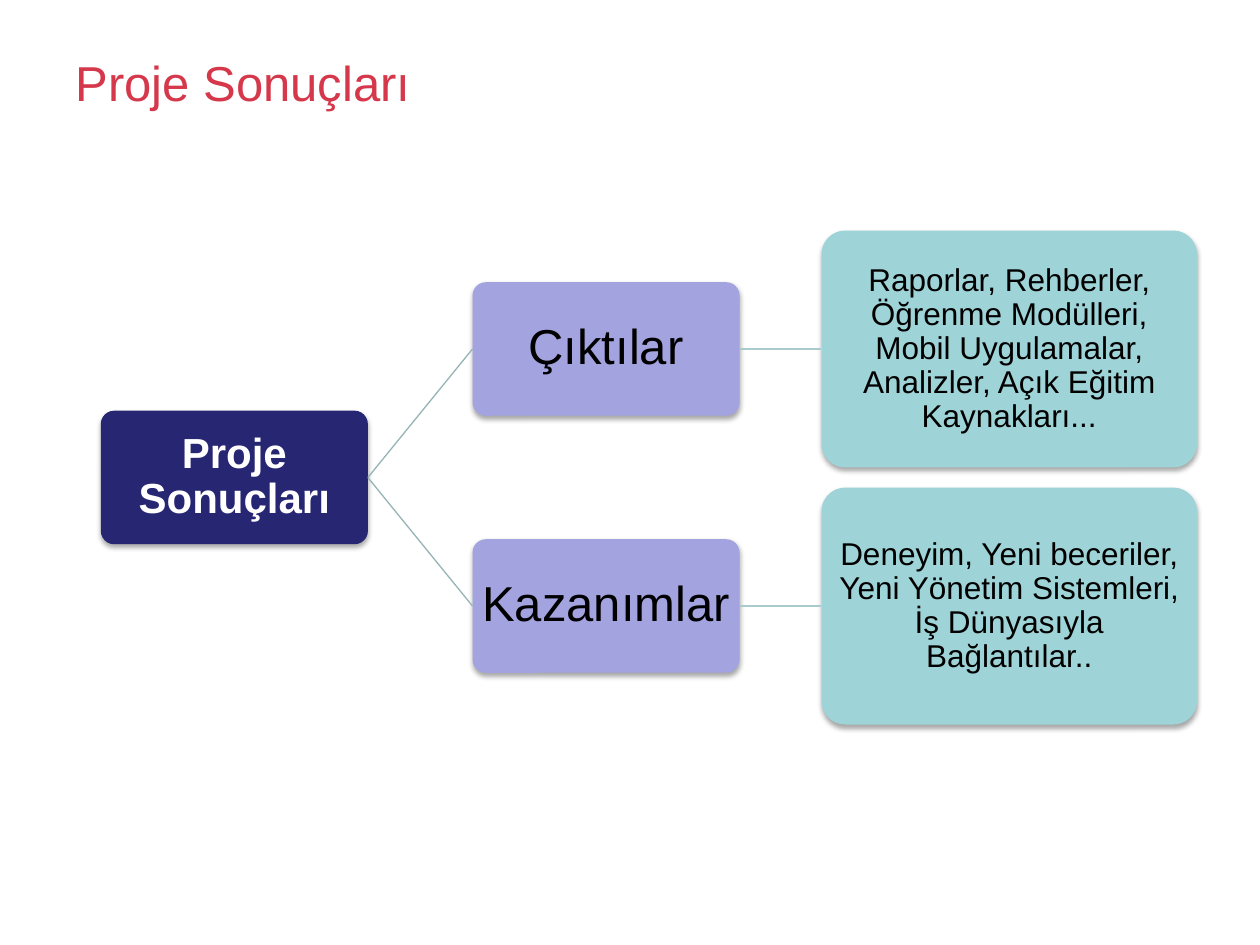
from dataclasses import dataclass

from lxml.etree import SubElement
from pptx import Presentation
from pptx.dml.color import RGBColor
from pptx.enum.shapes import MSO_CONNECTOR, MSO_SHAPE
from pptx.enum.text import MSO_ANCHOR, PP_ALIGN
from pptx.oxml.ns import qn
from pptx.util import Inches, Pt


@dataclass(frozen=True)
class Theme:
    font: str = "Arial"
    title: str = "D5384B"
    root: str = "262673"
    branch: str = "A3A3E0"
    leaf: str = "9ED3D7"
    root_line: str = "96B3B6"
    leaf_line: str = "AACBCE"
    light: str = "FFFFFF"
    dark: str = "000000"
    heading_size: int = 28
    root_size: int = 24
    leaf_size: int = 18


@dataclass(frozen=True)
class Box:
    left: float
    top: float
    width: float
    height: float

    def place(self):
        return [Inches(value) for value in (self.left, self.top, self.width, self.height)]


THEME = Theme()
BRANCHES = [
    ("Çıktılar",
     "Raporlar, Rehberler, Öğrenme Modülleri, Mobil Uygulamalar, "
     "Analizler, Açık Eğitim Kaynakları..."),
    ("Kazanımlar",
     "Deneyim, Yeni beceriler, Yeni Yönetim Sistemleri, İş Dünyasıyla Bağlantılar.."),
]


def style_text(paragraph, size, color, bold=False):
    for run in paragraph.runs:
        run.font.name = THEME.font
        run.font.size = Pt(size)
        run.font.bold = bold
        run.font.color.rgb = RGBColor.from_string(color)


def add_soft_shadow(shape):
    shape.shadow.inherit = False
    effects = shape._element.spPr.find(qn("a:effectLst"))
    shadow = SubElement(effects, qn("a:outerShdw"), blurRad=str(Pt(3.1)),
                        dist=str(Pt(1.8)), dir="5400000", rotWithShape="0")
    color = SubElement(shadow, qn("a:srgbClr"), val=THEME.dark)
    SubElement(color, qn("a:alpha"), val="35000")


def add_node(slide, box, text, fill, size, color, bold=False):
    shape = slide.shapes.add_shape(MSO_SHAPE.ROUNDED_RECTANGLE, *box.place())
    shape.adjustments[0] = 0.1
    shape.fill.solid()
    shape.fill.fore_color.rgb = RGBColor.from_string(fill)
    shape.line.fill.background()
    add_soft_shadow(shape)
    frame = shape.text_frame
    frame.word_wrap = True
    frame.vertical_anchor = MSO_ANCHOR.MIDDLE
    frame.margin_left = frame.margin_right = Inches(0.01)
    frame.margin_top = frame.margin_bottom = Inches(0.01)
    frame.text = text
    paragraph = frame.paragraphs[0]
    paragraph.alignment = PP_ALIGN.CENTER
    paragraph.line_spacing = 0.9
    style_text(paragraph, size, color, bold)
    return shape


def join_nodes(slide, start, end, color):
    connector = slide.shapes.add_connector(MSO_CONNECTOR.STRAIGHT, 0, 0, 0, 0)
    connector.begin_connect(start, 3)
    connector.end_connect(end, 1)
    connector.line.color.rgb = RGBColor.from_string(color)
    connector.line.width = Pt(0.75)
    SubElement(connector._element.spPr, qn("a:effectLst"))


def add_title(slide, box, text):
    title = slide.shapes.title
    title.left, title.top, title.width, title.height = box.place()
    title.text_frame.text = text
    title.text_frame.vertical_anchor = MSO_ANCHOR.MIDDLE
    paragraph = title.text_frame.paragraphs[0]
    paragraph.alignment = PP_ALIGN.LEFT
    style_text(paragraph, THEME.heading_size, THEME.title)


def add_result_tree(slide, box):
    node_width, node_height = 2.12, 1.06
    leaf_width, leaf_gap = 2.98, 0.16
    leaf_height = (box.height - leaf_gap) / 2
    branch_left = box.left + 2.95
    leaf_left = box.left + box.width - leaf_width
    root_top = box.top + (box.height - node_height) / 2
    root = add_node(slide, Box(box.left, root_top, node_width, node_height),
                    "Proje Sonuçları", THEME.root, THEME.root_size, THEME.light, bold=True)
    for index, (heading, details) in enumerate(BRANCHES):
        leaf_top = box.top + index * (leaf_height + leaf_gap)
        branch_top = leaf_top + (leaf_height - node_height) / 2
        branch = add_node(slide, Box(branch_left, branch_top, node_width, node_height),
                          heading, THEME.branch, THEME.heading_size, THEME.dark)
        leaf = add_node(slide, Box(leaf_left, leaf_top, leaf_width, leaf_height),
                        details, THEME.leaf, THEME.leaf_size, THEME.dark)
        join_nodes(slide, root, branch, THEME.root_line)
        join_nodes(slide, branch, leaf, THEME.leaf_line)


def main():
    presentation = Presentation()
    presentation.slide_width = Inches(10)
    presentation.slide_height = Inches(7.5)
    slide = presentation.slides.add_slide(presentation.slide_layouts[5])
    add_title(slide, Box(0.5, 0.3, 9, 0.7), "Proje Sonuçları")
    add_result_tree(slide, Box(0.8, 1.83, 8.7, 3.92))
    presentation.save("out.pptx")


if __name__ == "__main__":
    main()
